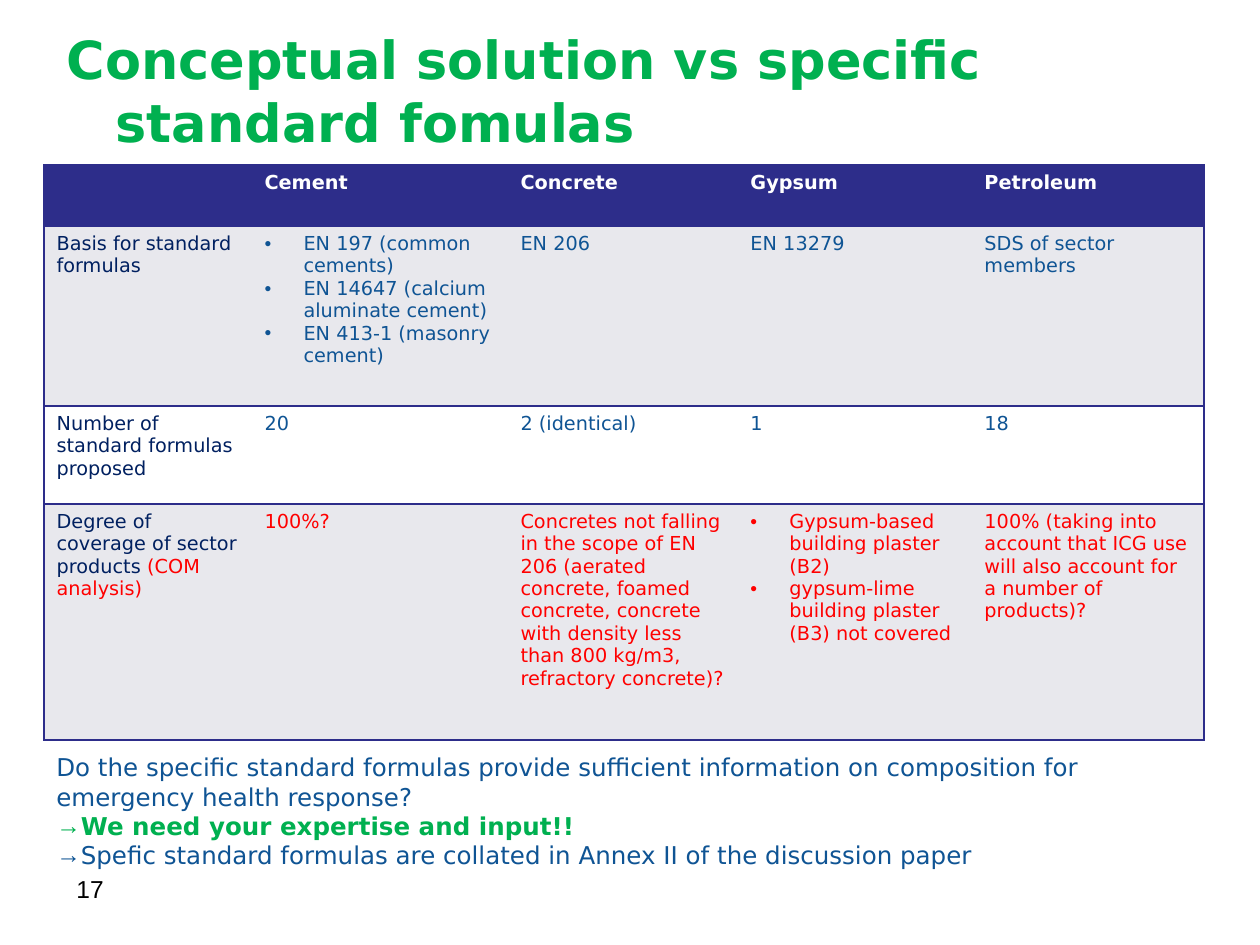
from lxml.etree import SubElement
from pptx import Presentation
from pptx.dml.color import RGBColor
from pptx.enum.text import MSO_ANCHOR, MSO_AUTO_SIZE, PP_ALIGN
from pptx.oxml import parse_xml
from pptx.oxml.ns import nsdecls, qn
from pptx.util import Emu, Pt

PX = 914400 // 126

THEME = {
    "rule": "2D2D8A",
    "bands": ["2D2D8A", "E8E8ED", "FFFFFF", "E8E8ED"],
    "title": {"size": 30, "color": "00B050", "bold": True, "name": "DejaVu Sans"},
    "head": {"size": 11, "color": "FFFFFF", "bold": True, "name": "DejaVu Sans"},
    "label": {"size": 11, "color": "002060", "bold": False, "name": "DejaVu Sans"},
    "fact": {"size": 11, "color": "0F5494", "bold": False, "name": "DejaVu Sans"},
    "doubt": {"size": 11, "color": "FF0000", "bold": False, "name": "DejaVu Sans"},
    "question": {"size": 14, "color": "0F5494", "bold": False, "name": "DejaVu Sans"},
    "appeal": {"size": 14, "color": "00B050", "bold": True, "name": "DejaVu Sans"},
    "number": {"size": 14, "color": "000000", "bold": False, "name": "Arial"},
}

TITLE = "Conceptual solution vs specific standard fomulas"
SECTORS = ["Cement", "Concrete", "Gypsum", "Petroleum"]
TOPICS = [
    ([("Basis for standard formulas", "label")], "fact", [
        ["EN 197 (common cements)", "EN 14647 (calcium aluminate cement)", "EN 413-1 (masonry cement)"],
        ["EN 206"],
        ["EN 13279"],
        ["SDS of sector members"],
    ]),
    ([("Number of standard formulas proposed", "label")], "fact", [
        ["20"], ["2 (identical)"], ["1"], ["18"],
    ]),
    ([("Degree of coverage of sector products ", "label"), ("(COM analysis)", "doubt")], "doubt", [
        ["100%?"],
        ["Concretes not falling in the scope of EN 206 (aerated concrete, foamed concrete, "
         "concrete with density less than 800 kg/m3, refractory concrete)?"],
        ["Gypsum-based building plaster (B2)", "gypsum-lime building plaster (B3) not covered"],
        ["100% (taking into account that ICG use will also account for a number of products)?"],
    ]),
]
CLOSING = [
    ("Do the specific standard formulas provide sufficient information on composition "
     "for emergency health response?", "question", None),
    ("We need your expertise and input!!", "appeal", "→"),
    ("Spefic standard formulas are collated in Annex II of the discussion paper", "question", "→"),
]
PAGE = "17"

TITLE_BOX = (54, 26, 1134, 129)
TABLE_AT = (44, 165)
COLUMNS = [208, 256, 230, 234, 232]
ROWS = [61, 180, 98, 236]
CLOSING_BOX = (44, 746, 1172, 131)
PAGE_BOX = (64, 868, 294, 66)
HANGS = {"title": 49, "•": 39, "→": 24}


def px(*lengths):
    return [Emu(length * PX) for length in lengths]


def set_hang(paragraph, hang):
    properties = paragraph._p.get_or_add_pPr()
    properties.set("marL", str(hang * PX))
    properties.set("indent", str(-hang * PX))
    return properties


def write(paragraph, runs, bullet=None):
    if bullet:
        properties = set_hang(paragraph, HANGS[bullet])
        SubElement(properties, qn("a:buFont")).set("typeface", "Arial")
        SubElement(properties, qn("a:buChar")).set("char", bullet)
    for words, role in runs:
        run = paragraph.add_run()
        run.text = words
        style = THEME[role]
        formats = {"size": Pt(style["size"]), "bold": style["bold"], "name": style["name"]}
        for attribute, setting in formats.items():
            setattr(run.font, attribute, setting)
        run.font.color.rgb = RGBColor.from_string(style["color"])


def fill_frame(frame, paragraphs):
    for index, (runs, bullet) in enumerate(paragraphs):
        paragraph = frame.add_paragraph() if index else frame.paragraphs[0]
        write(paragraph, runs, bullet)


def set_borders(cell, sides):
    properties = cell._tc.get_or_add_tcPr()
    for position, side in enumerate("LRTB"):
        paint = (f'<a:solidFill><a:srgbClr val="{THEME["rule"]}"/></a:solidFill>'
                 if side in sides else "<a:noFill/>")
        line = parse_xml(f'<a:ln{side} {nsdecls("a")} w="12700">{paint}</a:ln{side}>')
        properties.insert(position, line)


def add_title(slide):
    title = slide.shapes.title
    for attribute, length in zip(("left", "top", "width", "height"), px(*TITLE_BOX)):
        setattr(title, attribute, length)
    frame = title.text_frame
    formats = {"auto_size": MSO_AUTO_SIZE.NONE, "vertical_anchor": MSO_ANCHOR.MIDDLE, "word_wrap": True}
    for attribute, setting in formats.items():
        setattr(frame, attribute, setting)
    heading = frame.paragraphs[0]
    heading.alignment = PP_ALIGN.LEFT
    set_hang(heading, HANGS["title"])
    write(heading, [(TITLE, "title")])


def add_sector_table(slide):
    grid = [[[]] + [[([(sector, "head")], None)] for sector in SECTORS]]
    for label, role, answers in TOPICS:
        grid.append([[(label, None)]] + [
            [([(line, role)], "•" if len(lines) > 1 else None) for line in lines]
            for lines in answers])
    table = slide.shapes.add_table(
        len(ROWS), len(COLUMNS), *px(*TABLE_AT, sum(COLUMNS), sum(ROWS))).table
    for column, width in zip(table.columns, px(*COLUMNS)):
        column.width = width
    for row, height in zip(table.rows, px(*ROWS)):
        row.height = height
    outer = {0: "LTB", len(COLUMNS) - 1: "RTB"}
    for row_index, (band, answers) in enumerate(zip(THEME["bands"], grid)):
        for column_index, paragraphs in enumerate(answers):
            cell = table.cell(row_index, column_index)
            cell.fill.solid()
            cell.fill.fore_color.rgb = RGBColor.from_string(band)
            set_borders(cell, outer.get(column_index, "TB"))
            fill_frame(cell.text_frame, paragraphs)


def add_text(slide, box, paragraphs):
    frame = slide.shapes.add_textbox(*px(*box)).text_frame
    frame.word_wrap = True
    fill_frame(frame, paragraphs)


def main():
    deck = Presentation()
    deck.slide_width, deck.slide_height = px(1260, 945)
    slide = deck.slides.add_slide(deck.slide_layouts[5])
    add_title(slide)
    add_sector_table(slide)
    add_text(slide, CLOSING_BOX, [([(words, role)], bullet) for words, role, bullet in CLOSING])
    add_text(slide, PAGE_BOX, [([(PAGE, "number")], None)])
    deck.save("out.pptx")


if __name__ == "__main__":
    main()
